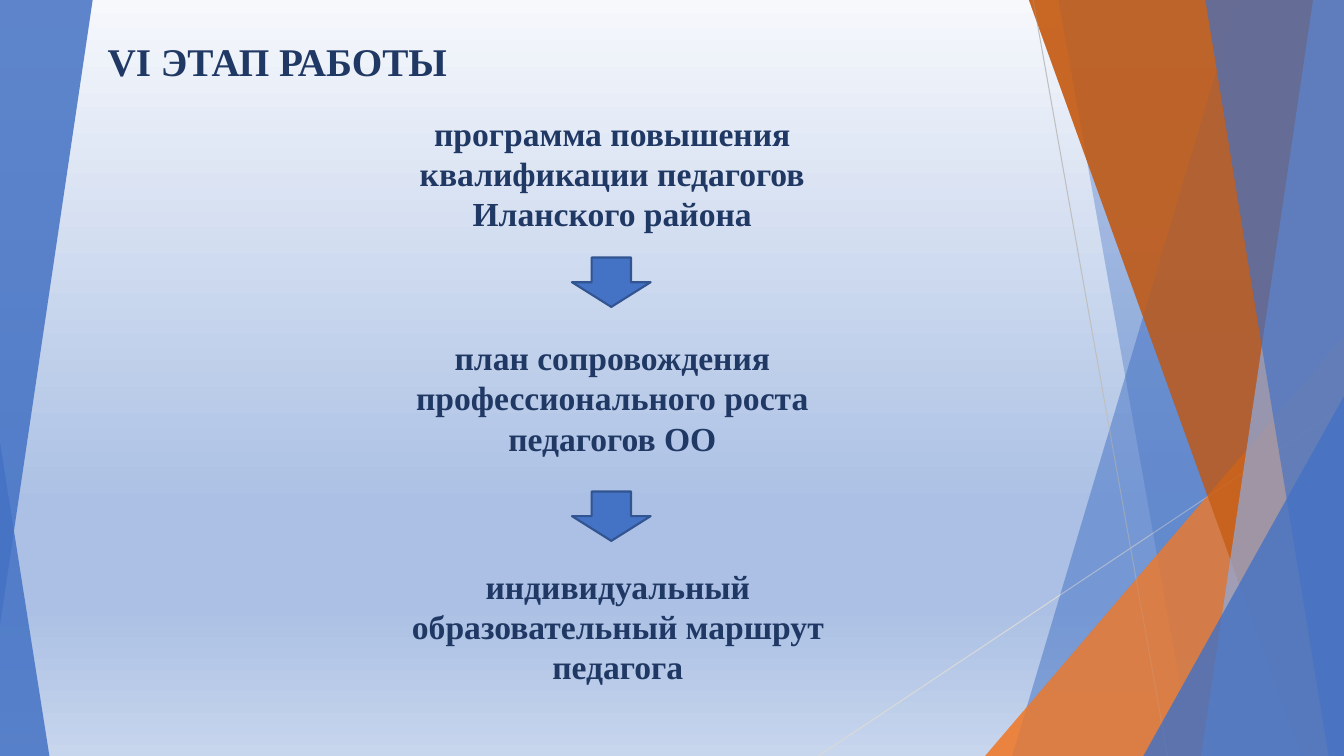
from dataclasses import dataclass

from pptx import Presentation
from pptx.dml.color import RGBColor
from pptx.enum.shapes import MSO_CONNECTOR, MSO_SHAPE
from pptx.enum.text import MSO_ANCHOR, MSO_AUTO_SIZE, PP_ALIGN
from pptx.oxml.ns import qn
from pptx.oxml.xmlchemy import OxmlElement
from pptx.util import Pt

STRAIGHT = MSO_CONNECTOR.STRAIGHT
TRIANGLE = MSO_SHAPE.ISOSCELES_TRIANGLE
RIGHT_ARROW = MSO_SHAPE.RIGHT_ARROW
CENTER = PP_ALIGN.CENTER
TOP = MSO_ANCHOR.TOP
FIT_SHAPE = MSO_AUTO_SIZE.SHAPE_TO_FIT_TEXT

WIDTH, HEIGHT = 960, 540


@dataclass(frozen=True)
class Theme:
    font: str = "Times New Roman"
    title_size: int = 28
    step_size: int = 24
    text: str = "203864"
    blue: str = "4472C4"
    light_blue: str = "8FAADC"
    orange: str = "ED7D31"
    dark_orange: str = "C55A11"
    arrow_line: str = "325491"
    steep_line: str = "BFBFBF"
    flat_line: str = "D9D9D9"
    background: tuple = ((0, "F6F8FC"), (67, "ABC0E4"), (80, "ABC0E4"), (100, "C7D5ED"))


THEME = Theme()

# Bands: top-left x, bottom-left x, colour, opacity in percent
BACK_BANDS = ((884, 723, THEME.blue, 30), (756, 852, THEME.blue, 20))
FRONT_BANDS = (
    (735, 929.5, THEME.dark_orange, 70),
    (938, 858, THEME.light_blue, 70),
    (861, 949, THEME.blue, 65),
)

# Steps: text, left, top, width
STEPS = (
    ("программа повышения квалификации педагогов Иланского района", 231.8, 77, 411),
    ("план сопровождения профессионального роста педагогов ОО", 288.7, 237, 297.4),
    ("индивидуальный образовательный маршрут педагога", 256.3, 400.3, 370),
)
ARROW_TOPS = (173.5, 340.6)


def set_background(slide):
    fill = slide.background.fill
    fill.gradient()
    fill.gradient_angle = 270
    stops = slide.element.find(".//" + qn("a:gsLst"))
    for stop in list(stops):
        stops.remove(stop)
    for position, color in THEME.background:
        stop = OxmlElement("a:gs")
        stop.set("pos", str(position * 1000))
        value = OxmlElement("a:srgbClr")
        value.set("val", color)
        stop.append(value)
        stops.append(stop)


def paint(shape, color, opacity=100, line=None):
    shape.shadow.inherit = False
    shape.fill.solid()
    shape.fill.fore_color.rgb = RGBColor.from_string(color)
    if opacity < 100:
        alpha = OxmlElement("a:alpha")
        alpha.set("val", str(opacity * 1000))
        shape.fill._xPr.find(".//" + qn("a:srgbClr")).append(alpha)
    if line:
        shape.line.color.rgb = RGBColor.from_string(line)
        shape.line.width = Pt(1.5)
    else:
        shape.line.fill.background()


def add_band(slide, top_x, bottom_x, color, opacity):
    builder = slide.shapes.build_freeform(Pt(top_x), Pt(0))
    corners = ((WIDTH, 0), (WIDTH, HEIGHT), (bottom_x, HEIGHT))
    builder.add_line_segments([(Pt(x), Pt(y)) for x, y in corners])
    paint(builder.convert_to_shape(), color, opacity)


def add_triangle(slide, left, top, width, height, color, opacity, apex=1, rotation=0):
    shape = slide.shapes.add_shape(TRIANGLE, Pt(left), Pt(top), Pt(width), Pt(height))
    shape.adjustments[0] = apex
    shape.rotation = rotation
    paint(shape, color, opacity)


def add_line(slide, start, end, color):
    connector = slide.shapes.add_connector(STRAIGHT, *map(Pt, start + end))
    connector.line.color.rgb = RGBColor.from_string(color)
    connector.line.width = Pt(0.75)
    connector._element.spPr.append(OxmlElement("a:effectLst"))


def add_down_arrow(slide, top):
    # The frame is upright; the quarter turn makes the arrow point down
    width, height = 35.3, 56.2
    shape = slide.shapes.add_shape(
        RIGHT_ARROW, Pt(419), Pt(top + (width - height) / 2 + 10.45), Pt(width), Pt(height))
    shape.rotation = 90
    paint(shape, THEME.blue, line=THEME.arrow_line)


def add_text(slide, text, left, top, width, height, size, wrap=True):
    box = slide.shapes.add_textbox(Pt(left), Pt(top), Pt(width), Pt(height))
    frame = box.text_frame
    frame.word_wrap = wrap
    frame.auto_size = FIT_SHAPE
    frame.vertical_anchor = TOP
    paragraph = frame.paragraphs[0]
    paragraph.alignment = CENTER
    run = paragraph.add_run()
    run.text = text
    run.font.name = THEME.font
    run.font.size = Pt(size)
    run.font.bold = True
    run.font.color.rgb = RGBColor.from_string(THEME.text)


def add_facets(slide):
    for band in BACK_BANDS:
        add_band(slide, *band)
    add_triangle(slide, 703.7, 240, 256.3, 300, THEME.orange, 72)
    for band in FRONT_BANDS:
        add_band(slide, *band)
    add_triangle(slide, 816.7, 283, 143.3, 257, THEME.blue, 80)


def main():
    presentation = Presentation()
    presentation.slide_width, presentation.slide_height = Pt(WIDTH), Pt(HEIGHT)
    slide = presentation.slides.add_slide(presentation.slide_layouts[6])
    set_background(slide)

    # Two layers of translucent facets with thin lines between them
    add_facets(slide)
    add_triangle(slide, 0, 316, 35.3, 224, THEME.blue, 85, apex=0)
    add_line(slide, (738, 0), (834, HEIGHT), THEME.steep_line)
    add_line(slide, (WIDTH, 290), (584.6, HEIGHT), THEME.flat_line)
    add_facets(slide)
    add_triangle(slide, 0, 0, 66.2, 446.4, THEME.blue, 85, rotation=180)

    # Title and the chain of steps
    add_text(slide, "VI ЭТАП РАБОТЫ", 68.4, 23, 259.2, 41, THEME.title_size, wrap=False)
    for text, left, top, width in STEPS:
        add_text(slide, text, left, top, width, 94.3, THEME.step_size)
    for top in ARROW_TOPS:
        add_down_arrow(slide, top)

    presentation.save("out.pptx")


if __name__ == "__main__":
    main()
